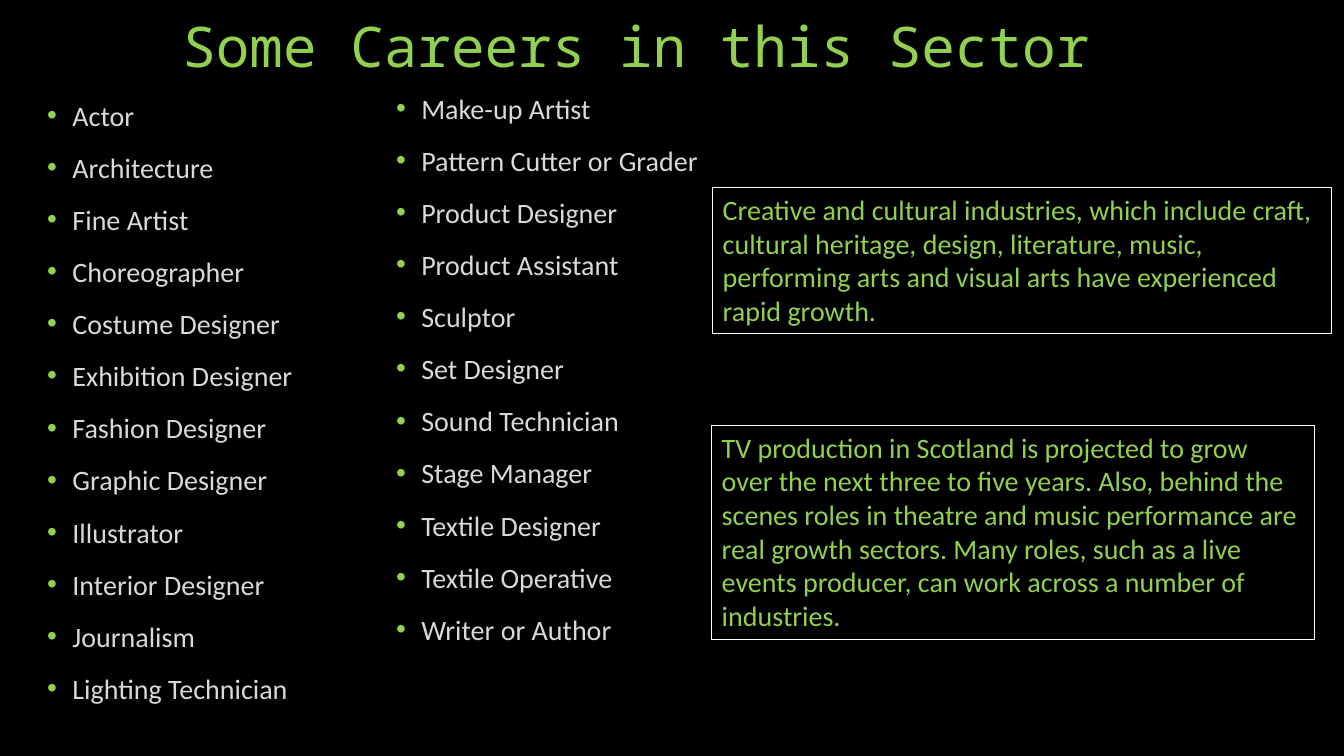
from lxml import etree
from pptx import Presentation
from pptx.dml.color import RGBColor
from pptx.enum.shapes import MSO_SHAPE
from pptx.enum.text import MSO_ANCHOR, PP_ALIGN
from pptx.oxml.ns import qn
from pptx.util import Pt

RECTANGLE = MSO_SHAPE.RECTANGLE
TOP, BOTTOM = MSO_ANCHOR.TOP, MSO_ANCHOR.BOTTOM
LEFT = PP_ALIGN.LEFT

EMU_PER_PX = 9144
BLACK, WHITE, GREEN, GREY = "000000", "FFFFFF", "92D050", "D9D9D9"
BODY_FONT, TITLE_FONT = "Calibri", "Noto Sans Mono"
INDENT = 25

FIRST_CAREERS = [
    "Actor", "Architecture", "Fine Artist", "Choreographer",
    "Costume Designer", "Exhibition Designer", "Fashion Designer",
    "Graphic Designer", "Illustrator", "Interior Designer",
    "Journalism", "Lighting Technician",
]
SECOND_CAREERS = [
    "Make-up Artist", "Pattern Cutter or Grader", "Product Designer",
    "Product Assistant", "Sculptor", "Set Designer", "Sound Technician",
    "Stage Manager", "Textile Designer", "Textile Operative",
    "Writer or Author",
]
INDUSTRY_GROWTH = (
    "Creative and cultural industries, which include craft, cultural heritage, "
    "design, literature, music, performing arts and visual arts have "
    "experienced rapid growth."
)
TV_GROWTH = (
    "TV production in Scotland is projected to grow over the next three to five "
    "years. Also, behind the scenes roles in theatre and music performance are "
    "real growth sectors. Many roles, such as a live events producer, can work "
    "across a number of industries."
)


def px(length):
    """Turn a length in px into EMU."""
    return length * EMU_PER_PX


def color(value):
    """Turn a hex string into a colour."""
    return RGBColor.from_string(value)


def style_paragraph(paragraph, text, name, size, hex_color):
    """Fill a paragraph with left-aligned text in one font."""
    paragraph.text = text
    paragraph.alignment = LEFT
    paragraph.font.name = name
    paragraph.font.size = Pt(size)
    paragraph.font.color.rgb = color(hex_color)


def add_bullet(paragraph):
    """Give a paragraph a green bullet with a hanging indent."""
    properties = paragraph._p.get_or_add_pPr()
    properties.set("marL", str(px(INDENT)))
    properties.set("indent", str(-px(INDENT)))
    bullet_color = etree.Element(qn("a:buClr"))
    etree.SubElement(bullet_color, qn("a:srgbClr"), val=GREEN)
    bullet_font = etree.Element(qn("a:buFont"), typeface="Arial")
    bullet = etree.Element(qn("a:buChar"), char="•")
    position = len(properties.findall(qn("a:lnSpc")) + properties.findall(qn("a:spcBef")))
    for offset, element in enumerate((bullet_color, bullet_font, bullet)):
        properties.insert(position + offset, element)


def add_title(slide, box, text):
    """Write the slide title at the foot of its box."""
    frame = slide.shapes.add_textbox(*map(px, box)).text_frame
    frame.word_wrap = True
    frame.vertical_anchor = BOTTOM
    paragraph = frame.paragraphs[0]
    style_paragraph(paragraph, text, TITLE_FONT, 40, GREEN)
    paragraph.line_spacing = 0.9


def add_career_list(slide, box, careers):
    """Write one column of bulleted careers."""
    frame = slide.shapes.add_textbox(*map(px, box)).text_frame
    frame.word_wrap = True
    for index, career in enumerate(careers):
        paragraph = frame.add_paragraph() if index else frame.paragraphs[0]
        style_paragraph(paragraph, career, BODY_FONT, 20, GREY)
        paragraph.line_spacing = 0.8
        paragraph.space_before = Pt(18)
        add_bullet(paragraph)


def add_growth_note(slide, box, text):
    """Draw an outlined box with a note on growth."""
    shape = slide.shapes.add_shape(RECTANGLE, *map(px, box))
    shape.shadow.inherit = False
    shape.fill.background()
    shape.line.color.rgb = color(WHITE)
    shape.line.width = Pt(0.75)
    frame = shape.text_frame
    frame.word_wrap = True
    frame.vertical_anchor = TOP
    style_paragraph(frame.paragraphs[0], text, BODY_FONT, 20, GREEN)


def build_careers_slide(presentation):
    """Add the slide on careers in the sector."""
    slide = presentation.slides.add_slide(presentation.slide_layouts[6])
    slide.background.fill.solid()
    slide.background.fill.fore_color.rgb = color(BLACK)
    add_title(slide, (171, 21, 1000, 63), "Some Careers in this Sector")
    add_career_list(slide, (37, 99, 441, 567), FIRST_CAREERS)
    add_career_list(slide, (383, 92, 441, 575), SECOND_CAREERS)
    add_growth_note(slide, (707, 186, 614, 145), INDUSTRY_GROWTH)
    add_growth_note(slide, (706, 422, 598, 212), TV_GROWTH)


def main():
    """Build and save the presentation."""
    presentation = Presentation()
    presentation.slide_width = px(1333)
    presentation.slide_height = px(750)
    build_careers_slide(presentation)
    presentation.save("out.pptx")


if __name__ == "__main__":
    main()
